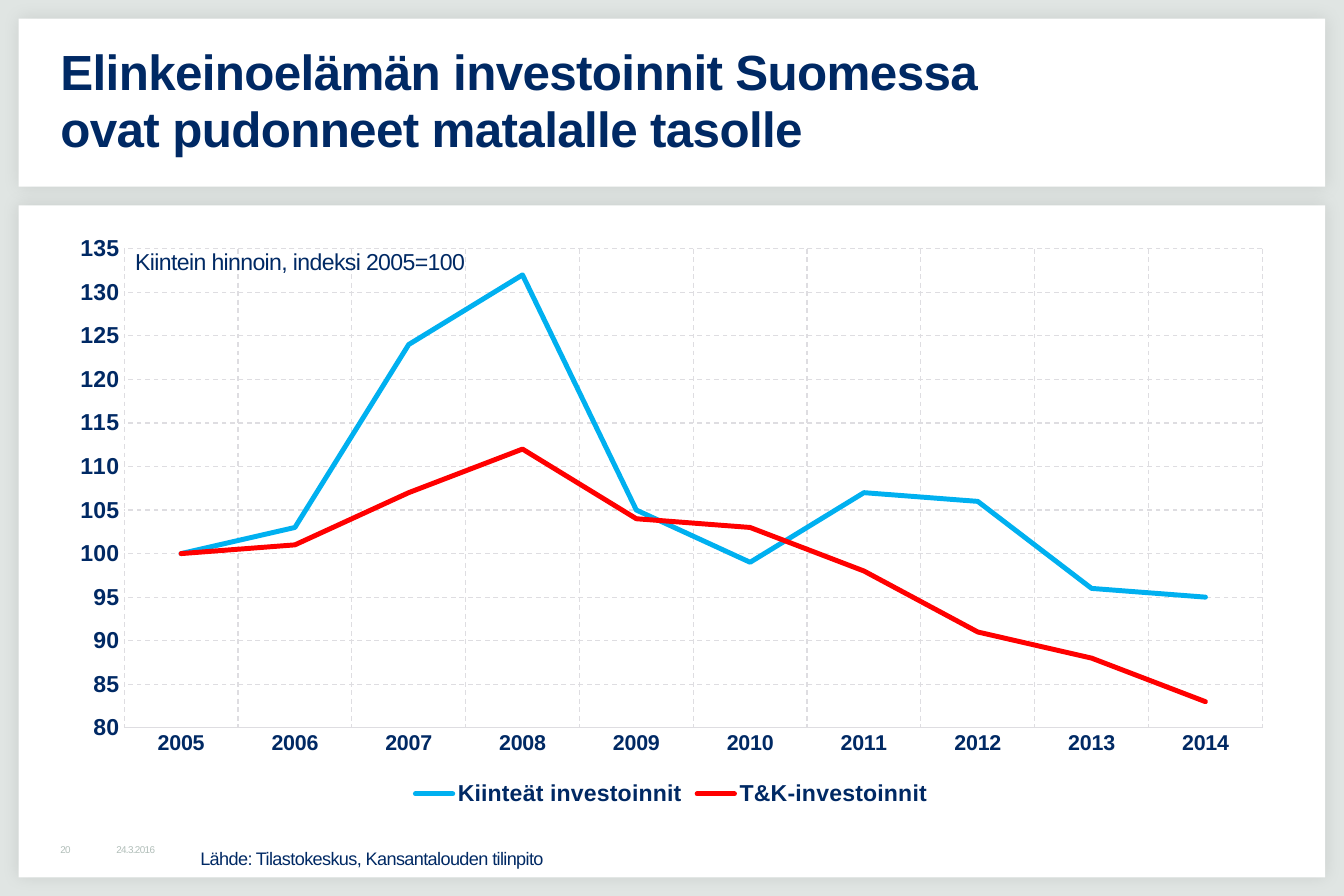
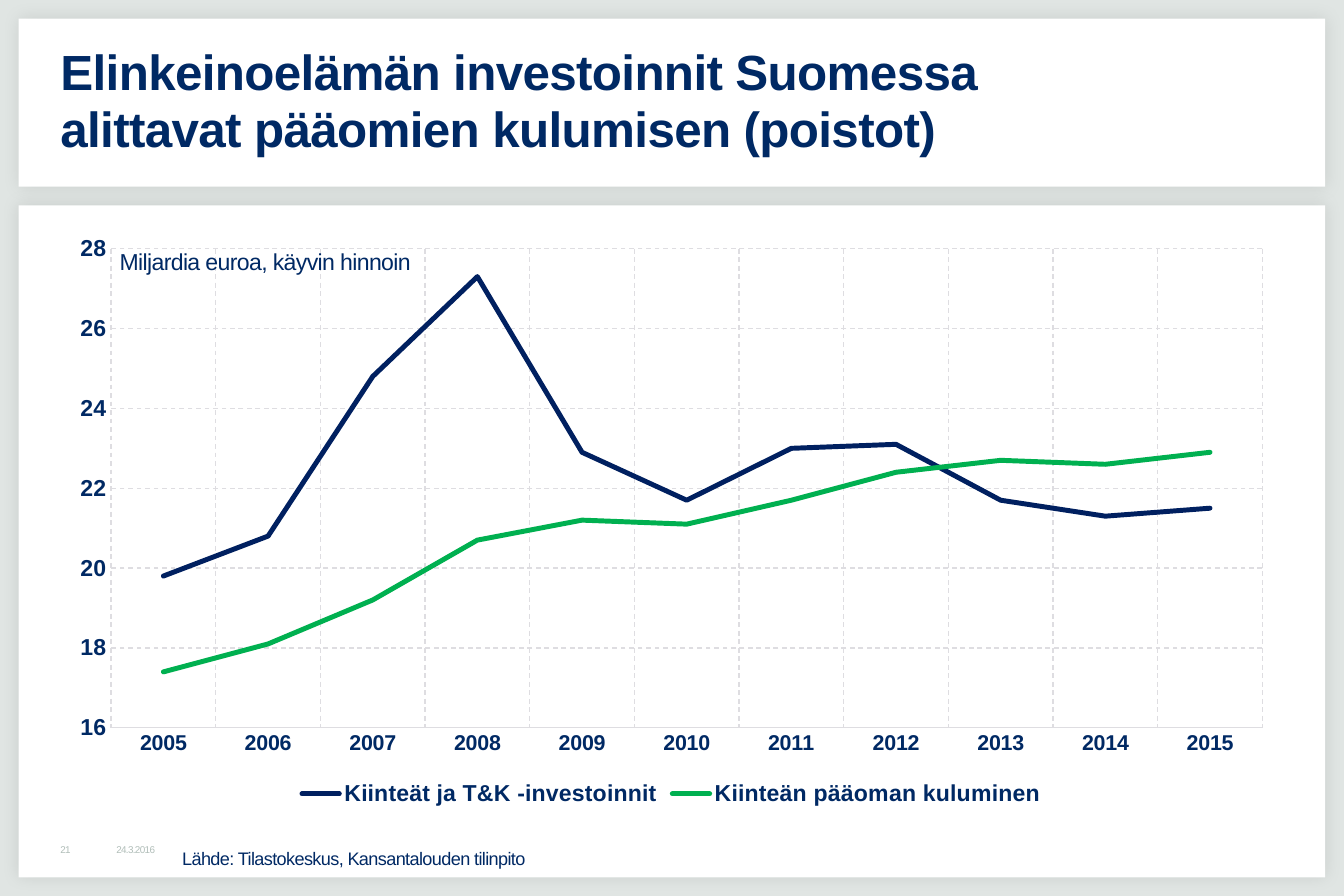
from collections import namedtuple

from lxml import etree
from pptx import Presentation
from pptx.chart.data import CategoryChartData
from pptx.dml.color import RGBColor
from pptx.enum.chart import XL_CHART_TYPE as ChartType
from pptx.enum.chart import XL_LEGEND_POSITION as LegendPosition
from pptx.enum.chart import XL_TICK_MARK as TickMark
from pptx.enum.dml import MSO_LINE as LineStyle
from pptx.enum.shapes import MSO_SHAPE as Shape
from pptx.enum.text import MSO_ANCHOR as Anchor
from pptx.enum.text import MSO_AUTO_SIZE as AutoSize
from pptx.enum.text import PP_ALIGN as Align
from pptx.oxml.ns import qn
from pptx.util import Pt

Box = namedtuple("Box", "left top width height")

FONT = "Arial"
NAVY, GREY, GRID = "002964", "B1BEB9", "DEDDE1"
WHITE, BACKDROP, CHART_TEXT = "FFFFFF", "E0E5E3", "29282E"
WIDTH, HEIGHT, MARGIN, INSET = 816.48, 544.32, 11.34, 2.83
PANEL_WIDTH = WIDTH - 2 * MARGIN
HEADER = Box(MARGIN, MARGIN, PANEL_WIDTH, 102.04)
BODY_TOP = 2 * MARGIN + HEADER.height
BODY = Box(MARGIN, BODY_TOP, PANEL_WIDTH, HEIGHT - MARGIN - BODY_TOP)
DATE = "24.3.2016"
SOURCE = "Lähde: Tilastokeskus, Kansantalouden tilinpito"

SLIDES = [
    dict(
        title="Elinkeinoelämän investoinnit Suomessa\novat pudonneet matalalle tasolle",
        number=20,
        unit="Kiintein hinnoin, indeksi 2005=100",
        unit_left=68,
        source_left=107.5,
        scale=(80, 135, 5),
        years=range(2005, 2015),
        series=[
            ("Kiinteät investoinnit", "00B0F0",
             [100, 103, 124, 132, 105, 99, 107, 106, 96, 95]),
            ("T&K-investoinnit", "FF0000",
             [100, 101, 107, 112, 104, 103, 98, 91, 88, 83]),
        ],
    ),
    dict(
        title="Elinkeinoelämän investoinnit Suomessa\nalittavat pääomien kulumisen (poistot)",
        number=21,
        unit="Miljardia euroa, käyvin hinnoin",
        unit_left=58.5,
        source_left=96.5,
        scale=(16, 28, 2),
        years=range(2005, 2016),
        series=[
            ("Kiinteät ja T&K -investoinnit", "002060",
             [19.8, 20.8, 24.8, 27.3, 22.9, 21.7, 23, 23.1, 21.7, 21.3, 21.5]),
            ("Kiinteän pääoman kuluminen", "00B050",
             [17.4, 18.1, 19.2, 20.7, 21.2, 21.1, 21.7, 22.4, 22.7, 22.6, 22.9]),
        ],
    ),
]


def color(hex_value):
    """Turn a hex string into a colour."""
    return RGBColor.from_string(hex_value)


def inside(box, left, top, width, height):
    """Return a box offset from the corner of another box."""
    return Box(box.left + left, box.top + top, width, height)


def points(box):
    """Convert a box to point lengths."""
    return [Pt(length) for length in box]


def style_font(font, size, hex_value, bold=False):
    """Set typeface, size, colour and weight."""
    font.name, font.size, font.bold = FONT, Pt(size), bold
    font.color.rgb = color(hex_value)


def style_text(paragraph, size, hex_value, bold=False):
    """Format every run with the tightened letter spacing."""
    for run in paragraph.runs:
        style_font(run.font, size, hex_value, bold)
        run.font._element.set("spc", "-40")


def add_panels(slide):
    """Place the white shadowed panels on the layout of the slide."""
    layout_tree = slide.slide_layout.shapes.element
    for order, box in enumerate((HEADER, BODY)):
        panel = slide.shapes.add_shape(Shape.RECTANGLE, *points(box))
        panel.fill.solid()
        panel.fill.fore_color.rgb = color(WHITE)
        panel.line.fill.background()
        panel.shadow.inherit = False
        effects = panel.element.spPr.find(qn("a:effectLst"))
        shadow = etree.SubElement(effects, qn("a:outerShdw"), blurRad=str(Pt(10)),
                                  dist="0", dir="2700000", algn="ctr", rotWithShape="0")
        tint = etree.SubElement(shadow, qn("a:srgbClr"), val="000000")
        etree.SubElement(tint, qn("a:alpha"), val="10000")
        panel.element.nvSpPr.cNvPr.set("id", str(20 + order))
        layout_tree.insert(2 + order, panel.element)


def add_title(slide, box, text):
    """Fill the title placeholder in the header panel."""
    title = slide.shapes.title
    title.left, title.top, title.width, title.height = points(
        inside(box, 22.5, 11.2, 748.8, 79.2))
    frame = title.text_frame
    frame.auto_size, frame.word_wrap = AutoSize.NONE, True
    frame.vertical_anchor = Anchor.MIDDLE
    frame.margin_left, frame.margin_right = Pt(INSET), Pt(7.2)
    frame.margin_top = frame.margin_bottom = Pt(3.6)
    heading = frame.paragraphs[0]
    heading.text = text
    heading.alignment, heading.line_spacing = Align.LEFT, 0.95
    style_text(heading, 30, NAVY, bold=True)


def add_label(slide, box, text, size, hex_value, anchor=Anchor.TOP):
    """Add a small line of text."""
    frame = slide.shapes.add_textbox(*points(box)).text_frame
    frame.word_wrap, frame.vertical_anchor = True, anchor
    frame.margin_left = frame.margin_right = Pt(INSET)
    frame.margin_top = frame.margin_bottom = Pt(INSET)
    frame.text = text
    style_text(frame.paragraphs[0], size, hex_value)


def style_axis(axis, size):
    """Give an axis bold labels and a dashed grid."""
    style_font(axis.tick_labels.font, size, NAVY, bold=True)
    axis.major_tick_mark = axis.minor_tick_mark = TickMark.NONE
    axis.has_major_gridlines = True
    grid = axis.major_gridlines.format.line
    grid.color.rgb, grid.width = color(GRID), Pt(0.75)
    grid.dash_style = LineStyle.DASH


def add_line_chart(slide, box, years, series, scale):
    """Add the line chart with its axes and legend."""
    data = CategoryChartData(number_format="General")
    data.categories = [str(year) for year in years]
    for name, _, values in series:
        data.add_series(name, values)
    chart = slide.shapes.add_chart(ChartType.LINE, *points(box), data).chart
    style_font(chart.font, 10, CHART_TEXT)
    chart.has_title = False
    chart.has_legend = True
    chart.legend.position = LegendPosition.BOTTOM
    chart.legend.include_in_layout = False
    style_font(chart.legend.font, 14, NAVY, bold=True)

    year_axis, value_axis = chart.category_axis, chart.value_axis
    style_axis(year_axis, 13)
    year_axis.format.line.color.rgb = color(GRID)
    year_axis.format.line.width = Pt(0.75)
    style_axis(value_axis, 14)
    value_axis.format.line.fill.background()
    value_axis.minimum_scale, value_axis.maximum_scale, value_axis.major_unit = scale
    value_axis.tick_labels.number_format = "#,##0"
    value_axis.tick_labels.number_format_is_linked = False

    plot = chart.plots[0]
    plot.vary_by_categories = False
    for curve, (_, hex_value, _) in zip(plot.series, series):
        curve.smooth = False
        stroke = curve.format.line
        stroke.color.rgb, stroke.width = color(hex_value), Pt(3)
        curve.format._element.find(qn("c:spPr")).find(qn("a:ln")).set("cap", "rnd")


def add_body(slide, box, content):
    """Fill the body panel with chart, unit and source."""
    add_line_chart(slide, inside(box, 22.5, 11.36, 748, 357),
                   content["years"], content["series"], content["scale"])
    add_label(slide, inside(box, content["unit_left"], 22.9, 238, 23),
              content["unit"], 14, NAVY)
    add_label(slide, inside(box, content["source_left"], 387.2, 351, 18.7),
              SOURCE, 11, NAVY)


def add_footer(slide, box, number):
    """Add the slide number and the date."""
    for left, width, text in ((22.5, 34, str(number)), (56.5, 102, DATE)):
        add_label(slide, inside(box, left, 385.8, width, 11.5),
                  text, 6, GREY, Anchor.MIDDLE)


def main():
    """Build and save the presentation."""
    deck = Presentation()
    deck.slide_width, deck.slide_height = Pt(WIDTH), Pt(HEIGHT)
    backdrop = deck.slide_master.background.fill
    backdrop.solid()
    backdrop.fore_color.rgb = color(BACKDROP)
    title_only = deck.slide_layouts[5]
    for position, content in enumerate(SLIDES):
        slide = deck.slides.add_slide(title_only)
        if position == 0:
            add_panels(slide)
        add_title(slide, HEADER, content["title"])
        add_body(slide, BODY, content)
        add_footer(slide, BODY, content["number"])
    deck.save("out.pptx")


if __name__ == "__main__":
    main()
